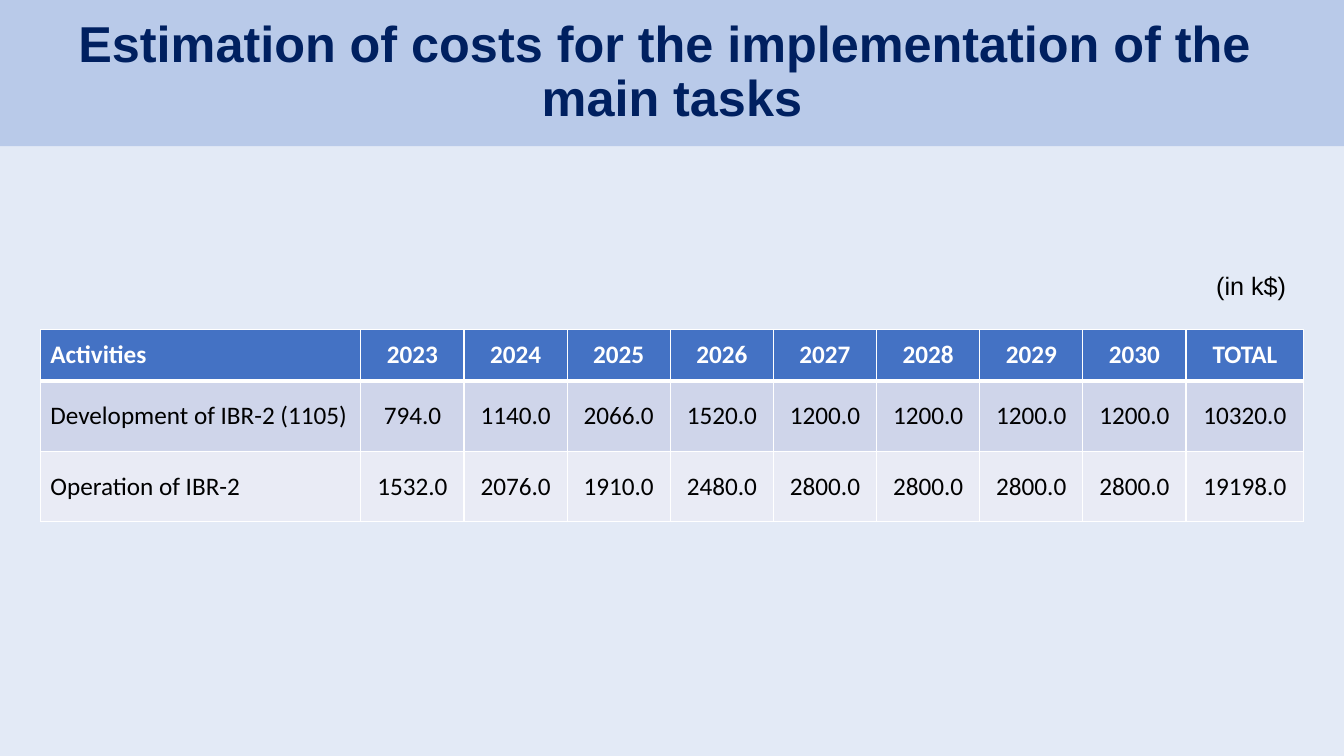
"""Build a slide with a cost table for the main tasks."""
from lxml.etree import SubElement
from pptx import Presentation
from pptx.dml.color import RGBColor
from pptx.enum.shapes import MSO_SHAPE as Shape
from pptx.enum.text import MSO_ANCHOR as Anchor, PP_ALIGN as Align
from pptx.oxml.ns import qn
from pptx.util import Pt

TITLE = "Estimation of costs for the implementation of the \nmain tasks"
UNIT = "(in k$)"
COSTS = [
    ("Activities", *map(str, range(2023, 2031)), "TOTAL"),
    ("Development of IBR-2 (1105)", "794.0", "1140.0", "2066.0", "1520.0",
     "1200.0", "1200.0", "1200.0", "1200.0", "10320.0"),
    ("Operation of IBR-2", "1532.0", "2076.0", "1910.0", "2480.0",
     "2800.0", "2800.0", "2800.0", "2800.0", "19198.0"),
]

BACKGROUND = RGBColor(0xE3, 0xEA, 0xF6)
BANNER = RGBColor(0xB9, 0xCA, 0xE9)
NAVY = RGBColor(0x00, 0x20, 0x60)
BLACK = RGBColor(0x00, 0x00, 0x00)
WHITE = RGBColor(0xFF, 0xFF, 0xFF)
ROW_FILLS = [RGBColor(0x44, 0x72, 0xC4), RGBColor(0xCF, 0xD5, 0xEA), RGBColor(0xE9, 0xEB, 0xF5)]

WIDTH, HEIGHT = 960, 540
TABLE_LEFT, TABLE_TOP = 28.8, 235.5
COLUMN_WIDTHS = [229] + [73.7] * 8 + [84.2]
ROW_HEIGHTS = [36.4, 50.4, 50.4]
THIN, THICK = 1, 3

TITLE_FONT = {"name": "Arial", "size": Pt(36), "bold": True}
UNIT_FONT = {"name": "Arial", "size": Pt(18), "bold": False}
CELL_FONT = {"name": "Calibri", "size": Pt(18)}


def write(frame, text, align, color, font, spacing=1.0):
    """Put one formatted paragraph into a text frame."""
    frame.word_wrap = True
    paragraph = frame.paragraphs[0]
    paragraph.text = text
    paragraph.alignment = align
    paragraph.line_spacing = spacing
    for run in paragraph.runs:
        run.font.color.rgb = color
        for name, value in font.items():
            setattr(run.font, name, value)


def set_borders(cell, widths):
    """Draw white cell borders, given in points as left, right, top, bottom."""
    properties = cell._tc.get_or_add_tcPr()
    for side, width in zip("LRTB", widths):
        line = SubElement(properties, qn(f"a:ln{side}"), w=str(Pt(width)))
        fill = SubElement(line, qn("a:solidFill"))
        SubElement(fill, qn("a:srgbClr"), val=str(WHITE))


def add_title(slide):
    """Add the banner that holds the title."""
    banner = slide.shapes.add_shape(Shape.RECTANGLE, 0, 0, Pt(WIDTH), Pt(104.4))
    banner.shadow.inherit = False
    banner.fill.solid()
    banner.fill.fore_color.rgb = BANNER
    banner.line.fill.background()
    banner.text_frame.vertical_anchor = Anchor.MIDDLE
    write(banner.text_frame, TITLE, Align.CENTER, NAVY, TITLE_FONT, 0.9)


def add_costs(slide):
    """Add the cost table."""
    table = slide.shapes.add_table(
        len(COSTS), len(COLUMN_WIDTHS), Pt(TABLE_LEFT), Pt(TABLE_TOP),
        Pt(sum(COLUMN_WIDTHS)), Pt(sum(ROW_HEIGHTS))).table
    for column, width in zip(table.columns, COLUMN_WIDTHS):
        column.width = Pt(width)
    for row, height in zip(table.rows, ROW_HEIGHTS):
        row.height = Pt(height)
    for row_index, values in enumerate(COSTS):
        header = row_index == 0
        top = THICK if row_index == 1 else THIN
        bottom = THICK if header else THIN
        for column_index, value in enumerate(values):
            cell = table.cell(row_index, column_index)
            set_borders(cell, (THIN, THIN, top, bottom))
            cell.fill.solid()
            cell.fill.fore_color.rgb = ROW_FILLS[row_index]
            cell.vertical_anchor = Anchor.MIDDLE
            write(cell.text_frame, value, Align.CENTER if column_index else Align.LEFT,
                  WHITE if header else BLACK, {**CELL_FONT, "bold": header})


def main():
    """Build and save the presentation."""
    presentation = Presentation()
    presentation.slide_width, presentation.slide_height = Pt(WIDTH), Pt(HEIGHT)
    slide = presentation.slides.add_slide(presentation.slide_layouts[6])
    slide.background.fill.solid()
    slide.background.fill.fore_color.rgb = BACKGROUND
    add_title(slide)
    add_costs(slide)
    unit = slide.shapes.add_textbox(Pt(33.8), Pt(192.2), Pt(892), Pt(30.2))
    write(unit.text_frame, UNIT, Align.RIGHT, BLACK, UNIT_FONT, 0.9)
    presentation.save("out.pptx")


if __name__ == "__main__":
    main()
